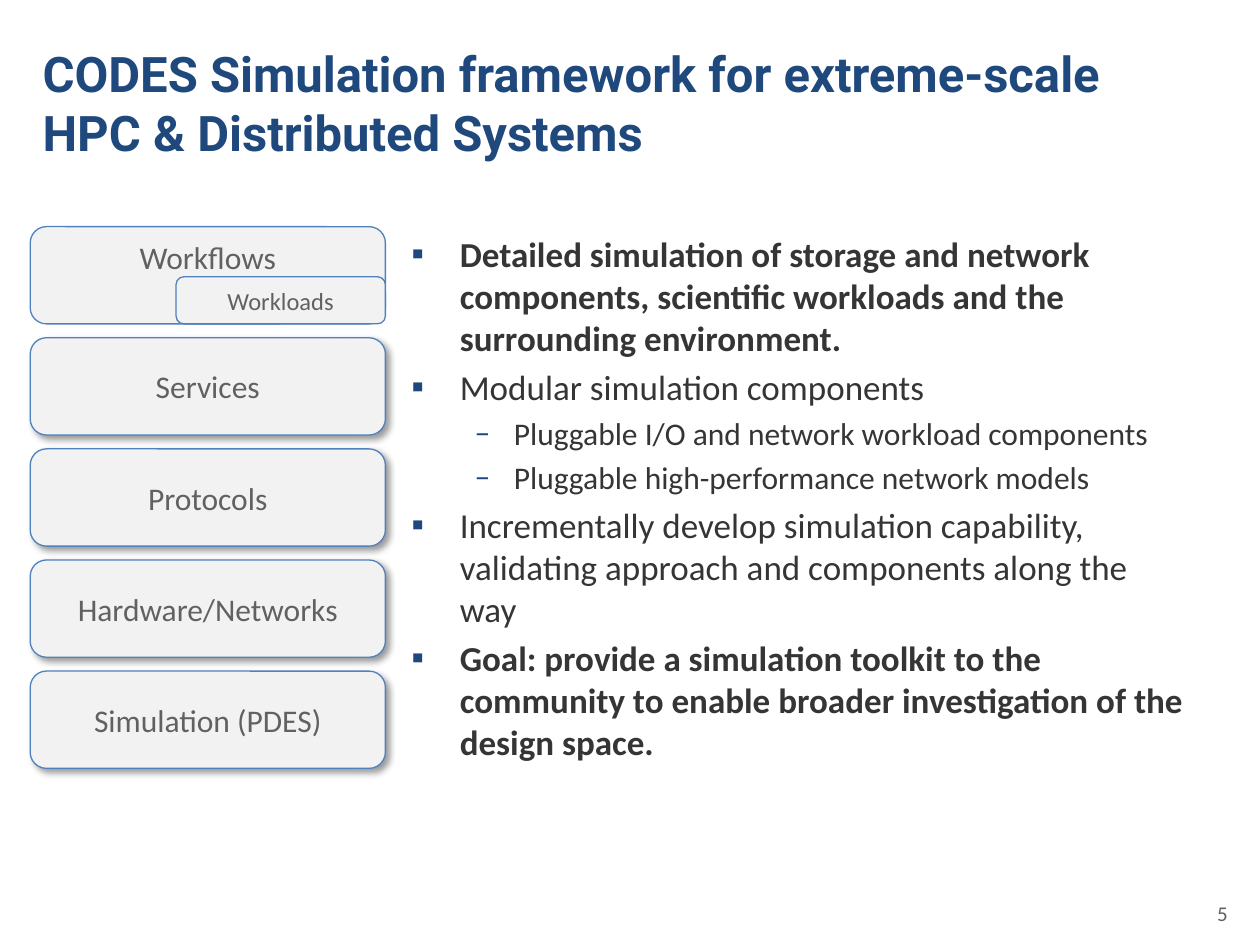
from lxml import etree
from pptx import Presentation
from pptx import util as u
from pptx.dml.color import RGBColor
from pptx.enum import shapes, text
from pptx.oxml import parse_xml
from pptx.oxml.ns import nsdecls, qn

NAVY = RGBColor(0x1F, 0x49, 0x7D)
BLUE = RGBColor(0x4F, 0x81, 0xBD)
PALE = RGBColor(0xF2, 0xF2, 0xF2)
GREY = RGBColor(0x61, 0x61, 0x61)
DARK = RGBColor(0x35, 0x35, 0x35)

LAYERS = ["Services", "Protocols", "Hardware/Networks", "Simulation (PDES)"]
POINTS = [
    (0, True, "Detailed simulation of storage and network components, "
              "scientific workloads and the surrounding environment."),
    (0, False, "Modular simulation components"),
    (1, False, "Pluggable I/O and network workload components"),
    (1, False, "Pluggable high-performance network models"),
    (0, False, "Incrementally develop simulation capability, "
               "validating approach and components along the way"),
    (0, True, "Goal: provide a simulation toolkit to the community "
              "to enable broader investigation of the design space."),
]
LEVELS = [("▪", 20, 0.97, -0.97), ("–", 18, 2.06, -0.79)]


def style(para, size, color, name="Calibri", bold=False):
    """Set the font of a whole paragraph."""
    font = para.font
    font.size, font.name, font.bold = u.Pt(size), name, bold
    font.color.rgb = color


def add_text_box(page, left, top, width, height):
    """Add a wrapping text box, measured in centimetres, and return its frame."""
    box = page.shapes.add_textbox(u.Cm(left), u.Cm(top), u.Cm(width), u.Cm(height))
    box.text_frame.word_wrap = True
    return box.text_frame


def add_title(page, left, top, width, height):
    """Place the slide title at the bottom of its box."""
    frame = add_text_box(page, left, top, width, height)
    frame.vertical_anchor = text.MSO_ANCHOR.BOTTOM
    para = frame.paragraphs[0]
    para.text = "CODES Simulation framework for extreme-scale HPC & Distributed Systems"
    style(para, 28, NAVY, "Roboto", True)


def add_bullet(para, mark, indent, hanging):
    """Give a paragraph a coloured bullet and a hanging indent."""
    properties = para._p.get_or_add_pPr()
    properties.set("marL", str(u.Cm(indent)))
    properties.set("indent", str(u.Cm(hanging)))
    color = etree.SubElement(properties, qn("a:buClr"))
    etree.SubElement(color, qn("a:srgbClr"), val=str(NAVY))
    etree.SubElement(properties, qn("a:buFont"), typeface="Calibri")
    etree.SubElement(properties, qn("a:buChar"), char=mark)


def add_points(page, left, top, width, height):
    """Place the bulleted list."""
    frame = add_text_box(page, left, top, width, height)
    for index, (level, bold, words) in enumerate(POINTS):
        mark, size, indent, hanging = LEVELS[level]
        para = frame.add_paragraph() if index else frame.paragraphs[0]
        para.text, para.level = words, level
        add_bullet(para, mark, indent, hanging)
        if index:
            para.space_before = u.Pt(size / 5)
        style(para, size, DARK, bold=bold)


def add_shadow(box):
    """Drop a soft diagonal shadow behind a shape."""
    effects = box._element.spPr.find(qn("a:effectLst"))
    effects.append(parse_xml(
        f'<a:outerShdw {nsdecls("a")} blurRad="{u.Pt(4)}" dist="{u.Pt(3)}" '
        'dir="2700000" algn="tl" rotWithShape="0"><a:srgbClr val="000000">'
        '<a:alpha val="40000"/></a:srgbClr></a:outerShdw>'))


def add_block(group, words, left, top, width, height, size=18,
              anchor=text.MSO_ANCHOR.MIDDLE, raised=False):
    """Add one labelled rounded block to the stack."""
    box = group.shapes.add_shape(shapes.MSO_SHAPE.ROUNDED_RECTANGLE,
                                 u.Cm(left), u.Cm(top), u.Cm(width), u.Cm(height))
    box.fill.solid()
    box.fill.fore_color.rgb = PALE
    box.line.color.rgb = BLUE
    box.line.width = u.Pt(0.75)
    box.shadow.inherit = False
    if raised:
        add_shadow(box)
    box.text_frame.vertical_anchor = anchor
    para = box.text_frame.paragraphs[0]
    para.text = words
    para.alignment = text.PP_ALIGN.CENTER
    style(para, size, GREY)


def add_stack(page, left, top, width, height):
    """Place the stack of simulation layers at equal steps."""
    group = page.shapes.add_group_shape()
    block = 1.96
    step = (height - block) / len(LAYERS)
    for index, words in enumerate(LAYERS, 1):
        add_block(group, words, left, top + index * step, width, block, raised=True)
    add_block(group, "Workflows", left, top, width, block, anchor=text.MSO_ANCHOR.TOP)
    inner_width, inner_height = 4.22, 0.95
    add_block(group, "Workloads", left + width - inner_width,
              top + block - inner_height, inner_width, inner_height, size=14)


def add_page_number(page, left, top, width, height):
    """Place the page number, aligned right."""
    para = add_text_box(page, left, top, width, height).paragraphs[0]
    para.text = "5"
    para.alignment = text.PP_ALIGN.RIGHT
    style(para, 12, GREY)


def main():
    """Build the slide and save the deck."""
    deck = Presentation()
    deck.slide_width, deck.slide_height = u.Cm(25.4), u.Cm(19.05)
    page = deck.slides.add_slide(deck.slide_layouts[6])
    add_title(page, 0.61, 0.76, 23.52, 2.62)
    add_points(page, 8.05, 4.57, 16.08, 12.4)
    add_stack(page, 0.61, 4.57, 7.16, 10.92)
    add_page_number(page, 23.93, 18.03, 1.07, 1.02)
    deck.save("out.pptx")


if __name__ == "__main__":
    main()
